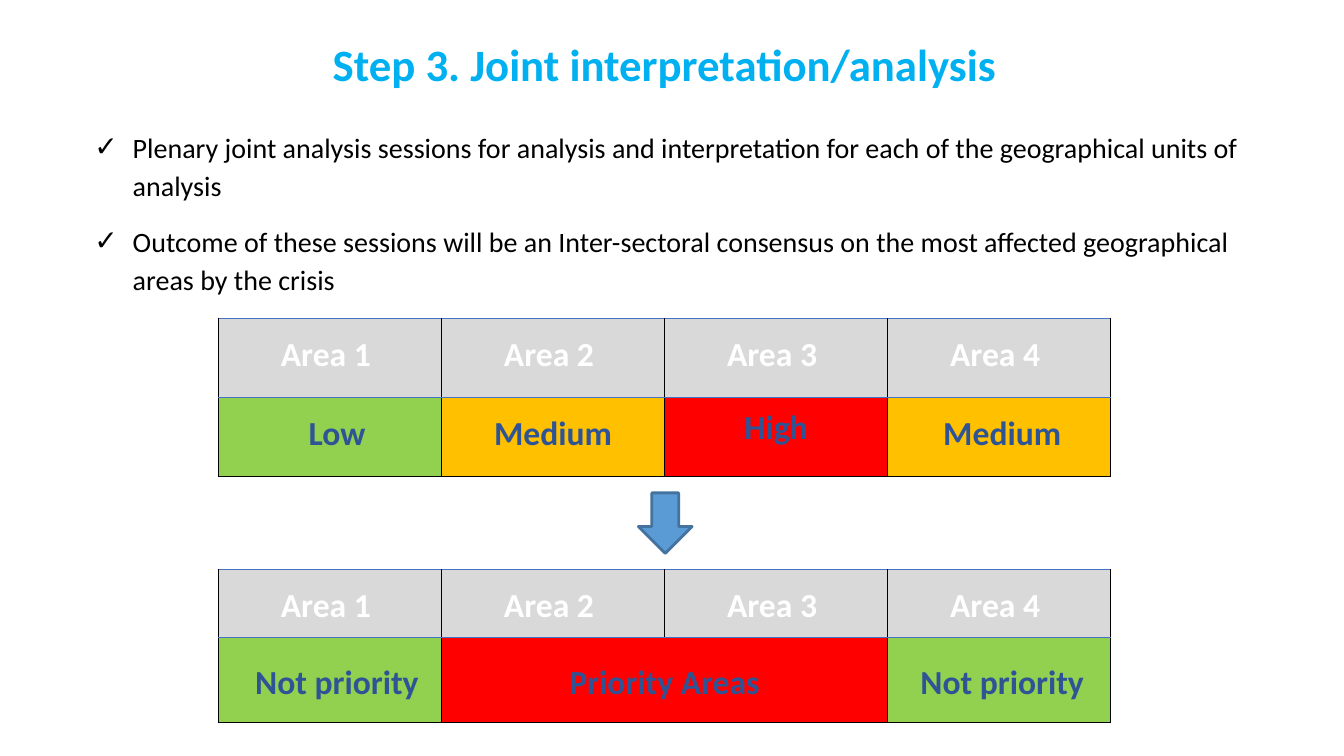
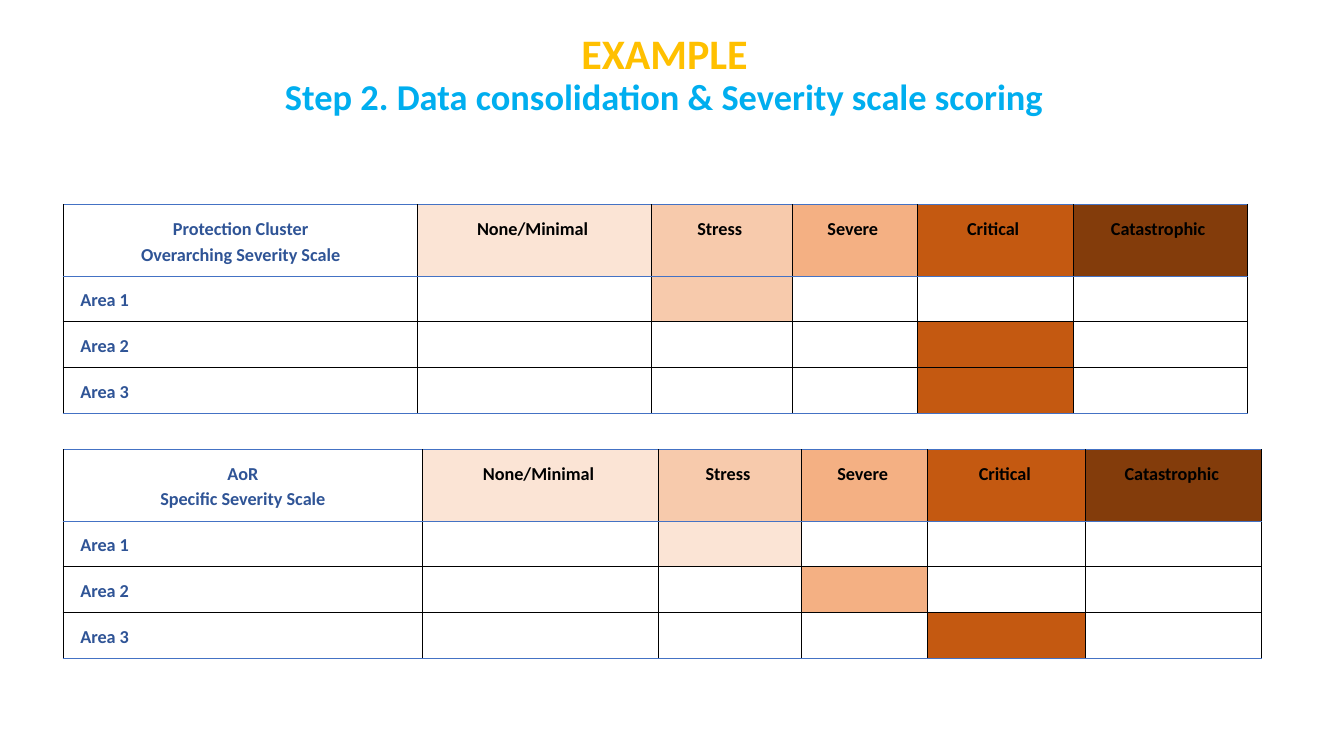
import pptx
import pptx.util
import pptx.dml.color
import pptx.enum.shapes
import pptx.enum.text
import pptx.oxml
import pptx.oxml.ns

RGB = pptx.dml.color.RGBColor
Inches, Pt = pptx.util.Inches, pptx.util.Pt
ALIGN, ANCHOR = pptx.enum.text.PP_ALIGN, pptx.enum.text.MSO_ANCHOR

FONT = "Calibri"
BLACK = RGB(0x00, 0x00, 0x00)
WHITE = RGB(0xFF, 0xFF, 0xFF)
GREY = RGB(0xD9, 0xD9, 0xD9)
SKY = RGB(0x00, 0xB0, 0xF0)
CYAN = RGB(0x00, 0xAE, 0xEF)
NAVY = RGB(0x2F, 0x54, 0x96)
RULE = RGB(0x44, 0x72, 0xC4)
ARROW = RGB(0x5B, 0x9B, 0xD5)
ARROW_LINE = RGB(0x43, 0x73, 0x9E)
GREEN = RGB(0x92, 0xD0, 0x50)
AMBER = RGB(0xFF, 0xC0, 0x00)
RED = RGB(0xFF, 0x00, 0x00)
MINIMAL = RGB(0xFB, 0xE4, 0xD5)
STRESS = RGB(0xF7, 0xCA, 0xAC)
SEVERE = RGB(0xF4, 0xB0, 0x83)
CRITICAL = RGB(0xC4, 0x59, 0x11)
CATASTROPHIC = RGB(0x83, 0x3C, 0x0B)

prs = pptx.Presentation()
prs.slide_width, prs.slide_height = Inches(13.33), Inches(7.5)
X, Y = prs.slide_width / 100, prs.slide_height / 100


def add_title(s, top, height, anchor, lines):
    sp = s.shapes.title
    sp.left, sp.top = int(1.05 * X), int(top * Y)
    sp.width, sp.height = int(96.8 * X), int(height * Y)
    sp.fill.solid()
    sp.fill.fore_color.rgb = WHITE
    tf = sp.text_frame
    tf.text = "\n".join(text for text, size, colour in lines)
    tf.auto_size = pptx.enum.text.MSO_AUTO_SIZE.NONE
    tf.vertical_anchor = anchor
    for p, (text, size, colour) in zip(tf.paragraphs, lines):
        p.alignment, p.line_spacing = ALIGN.CENTER, 0.9
        p.font.name, p.font.size, p.font.bold = FONT, Pt(size), True
        p.font.color.rgb = colour


def add_grid(s, left, top, widths, heights, rows, size, bottom, anchor=ANCHOR.TOP):
    frame = s.shapes.add_table(len(rows), len(widths), int(left * X), int(top * Y),
                               int(sum(widths) * X), int(sum(heights) * Y))
    table = frame.table
    table.first_row = table.horz_banding = False
    for column, width in zip(table.columns, widths):
        column.width = int(width * X)
    for row, height in zip(table.rows, heights):
        row.height = int(height * Y)
    for i, cells in enumerate(rows):
        for j, content in enumerate(cells):
            cell = table.cell(i, j)
            if content is None:
                table.cell(i, j - 1).merge(cell)
                text, fill, colour, shift, align, spacing = "", *previous[1:]
            else:
                text, fill, colour, shift, align, spacing = previous = content
            cell.fill.solid()
            cell.fill.fore_color.rgb = fill
            cell.margin_left = Inches(0.1 + max(shift, 0))
            cell.margin_right = Inches(0.1 + max(-shift, 0))
            cell.margin_top = cell.margin_bottom = Inches(0.1)
            cell.vertical_anchor = anchor if i else ANCHOR.TOP
            if content is not None:
                cell.text_frame.text = text
            for p in cell.text_frame.paragraphs:
                p.alignment, p.line_spacing = align, spacing
                p.font.name, p.font.size, p.font.bold = FONT, Pt(size), True
                p.font.color.rgb = colour
            above = RULE if i < 2 else BLACK
            below = RULE if i == 0 else bottom if i == len(rows) - 1 else BLACK
            edges = {"lnL": BLACK, "lnR": BLACK, "lnT": above, "lnB": below}
            for k, (tag, line) in enumerate(edges.items()):
                cell.fill._xPr.insert(k, pptx.oxml.parse_xml(
                    f'<a:{tag} {pptx.oxml.ns.nsdecls("a")} w="{Pt(0.75)}"><a:solidFill>'
                    f'<a:srgbClr val="{line}"/></a:solidFill></a:{tag}>'))


s = prs.slides.add_slide(prs.slide_layouts[1])
add_title(s, 2, 13.6, ANCHOR.MIDDLE, [("Step 3. Joint interpretation/analysis", 32, SKY)])

body = s.placeholders[1]
body.left, body.top, body.width, body.height = int(5 * X), int(15.87 * Y), int(90 * X), int(73.5 * Y)
tf = body.text_frame
tf.text = "\n".join([
    "Plenary joint analysis sessions for analysis and interpretation for each of the "
    "geographical units of analysis",
    "Outcome of these sessions will be an Inter-sectoral consensus on the most affected "
    "geographical areas by the crisis",
])
tf.auto_size = pptx.enum.text.MSO_AUTO_SIZE.NONE
for p in tf.paragraphs:
    p.line_spacing, p.space_before, p.space_after = 1.15, Pt(6), Pt(6)
    p.font.name, p.font.size = FONT, Pt(20)
    p.font.color.rgb = BLACK
    pPr = p._p.get_or_add_pPr()
    pPr.set("marL", str(Inches(0.55)))
    pPr.set("indent", str(Inches(-0.38)))
    bullet = pptx.oxml.parse_xml(f'<a:buChar {pptx.oxml.ns.nsdecls("a")} char="✓"/>')
    pPr.insert_element_before(bullet, "a:tabLst", "a:defRPr", "a:extLst")

areas = [(f"Area {n}", GREY, WHITE, -0.08, ALIGN.CENTER, 1.15) for n in range(1, 5)]
ratings = [
    ("Low", GREEN, NAVY, 0.14, ALIGN.CENTER, 1.15),
    ("Medium", AMBER, NAVY, 0, ALIGN.CENTER, 1.15),
    ("High", RED, NAVY, 0, ALIGN.CENTER, 1.0),
    ("Medium", AMBER, NAVY, 0.06, ALIGN.CENTER, 1.15),
]
priorities = [
    ("Not priority", GREEN, NAVY, 0.14, ALIGN.CENTER, 1.15),
    ("Priority Areas", RED, NAVY, 0, ALIGN.CENTER, 1.15),
    None,
    ("Not priority", GREEN, NAVY, 0.06, ALIGN.CENTER, 1.15),
]
add_grid(s, 16.25, 42.13, [16.6] * 4, [10.4, 10.5], [areas, ratings], 24, BLACK)
add_grid(s, 16.25, 75.33, [16.6] * 4, [9, 11.3], [areas, priorities], 24, BLACK, ANCHOR.MIDDLE)

arrow = s.shapes.add_shape(pptx.enum.shapes.MSO_SHAPE.DOWN_ARROW, int(47.5 * X), int(65.2 * Y),
                           int(4 * X), int(8 * Y))
arrow.shadow.inherit = False
arrow.fill.solid()
arrow.fill.fore_color.rgb = ARROW
arrow.line.color.rgb = ARROW_LINE
arrow.line.width = Pt(2)

s = prs.slides.add_slide(prs.slide_layouts[5])
add_title(s, 3.2, 13.07, ANCHOR.BOTTOM, [
    ("EXAMPLE", 30, AMBER),
    ("Step 2. Data consolidation & Severity scale scoring", 26, CYAN),
])

levels = [("None/Minimal", MINIMAL), ("Stress", STRESS), ("Severe", SEVERE),
          ("Critical", CRITICAL), ("Catastrophic", CATASTROPHIC)]
shares = [26.4, 17.35, 10.5, 9.3, 11.6, 12.95]
scales = [
    ("Protection Cluster\nOverarching Severity Scale", 27.1, 88.1,
     [(1, STRESS), (3, CRITICAL), (3, CRITICAL)]),
    ("AoR\nSpecific Severity Scale", 59.5, 89.2,
     [(1, MINIMAL), (2, SEVERE), (3, CRITICAL)]),
]
for heading, top, total, scores in scales:
    rows = [[(heading, WHITE, NAVY, 0, ALIGN.CENTER, 1.15)]
            + [(name, fill, BLACK, -0.04, ALIGN.CENTER, 1.15) for name, fill in levels]]
    for n, (level, colour) in enumerate(scores, 1):
        rows.append([(f"Area {n}", WHITE, NAVY, 0.07, ALIGN.LEFT, 1.15)]
                    + [("", colour if j == level else WHITE, BLACK, 0, ALIGN.LEFT, 1.15)
                       for j in range(len(levels))])
    widths = [total * share / sum(shares) for share in shares]
    add_grid(s, 4.7, top, widths, [9.4] + [6.06] * 3, rows, 13, RULE)

prs.save("out.pptx")
